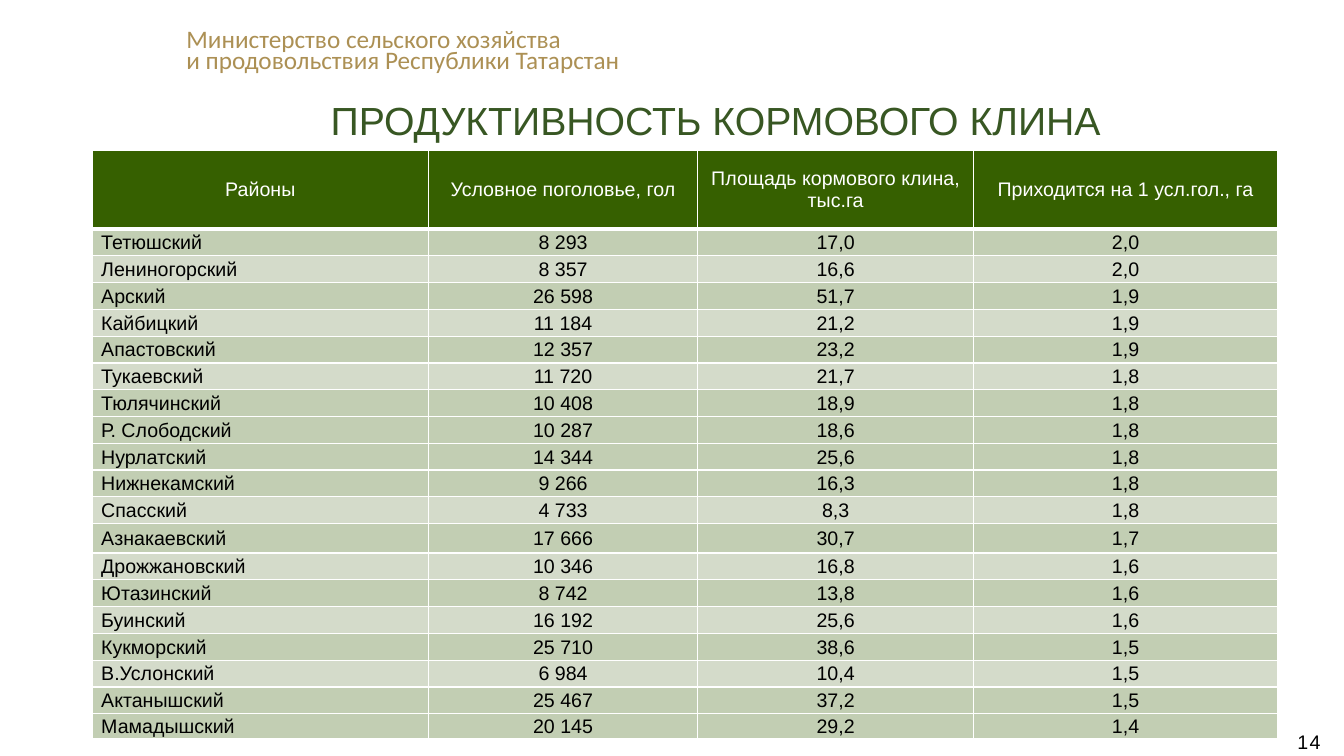
"""Build the slide on feed area productivity by district."""
import dataclasses
import typing

import pptx
import pptx.dml.color
import pptx.enum.text
import pptx.oxml
import pptx.oxml.ns
import pptx.util

Cm = pptx.util.Cm
Pt = pptx.util.Pt
ALIGN = pptx.enum.text.PP_ALIGN
ANCHOR = pptx.enum.text.MSO_ANCHOR

WHITE, BLACK = "FFFFFF", "000000"
HEADER_GREEN, BAND, LIGHT_BAND = "366000", "C2CEB3", "D4DBCA"
COLUMN_WIDTHS = (8.48, 6.78, 6.96, 7.65)
HEADER_HEIGHT, TALL_HEIGHT, LAST_HEIGHT = 1.98, 0.74, 0.63
ROW_HEIGHT = 11.49 / 17
HEADINGS = (
    "Районы",
    "Условное поголовье, гол",
    "Площадь кормового клина, тыс.га",
    "Приходится на 1 усл.гол., га",
)
CELL_INSETS = {
    "margin_left": Cm(0.03), "margin_top": Cm(0.03),
    "margin_right": Cm(0.03), "margin_bottom": 0,
}


@dataclasses.dataclass(frozen=True)
class TextStyle:
    size: float
    color: str
    name: str = "Arial"
    align: ALIGN = ALIGN.LEFT
    line_spacing: typing.Optional[float] = None
    tracking: int = 0
    indent: float = 0


@dataclasses.dataclass(frozen=True)
class Frame:
    left: float
    top: float
    width: float
    height: float


@dataclasses.dataclass(frozen=True)
class District:
    name: str
    herd: str
    area: str
    per_head: str
    fill: str = BAND
    height: float = ROW_HEIGHT


DISTRICTS = (
    District("Тетюшский", "8 293", "17,0", "2,0"),
    District("Лениногорский", "8 357", "16,6", "2,0", LIGHT_BAND),
    District("Арский", "26 598", "51,7", "1,9"),
    District("Кайбицкий", "11 184", "21,2", "1,9", LIGHT_BAND),
    District("Апастовский", "12 357", "23,2", "1,9"),
    District("Тукаевский", "11 720", "21,7", "1,8", LIGHT_BAND),
    District("Тюлячинский", "10 408", "18,9", "1,8"),
    District("Р. Слободский", "10 287", "18,6", "1,8"),
    District("Нурлатский", "14 344", "25,6", "1,8"),
    District("Нижнекамский", "9 266", "16,3", "1,8"),
    District("Спасский", "4 733", "8,3", "1,8", LIGHT_BAND),
    District("Азнакаевский", "17 666", "30,7", "1,7", height=TALL_HEIGHT),
    District("Дрожжановский", "10 346", "16,8", "1,6", LIGHT_BAND),
    District("Ютазинский", "8 742", "13,8", "1,6"),
    District("Буинский", "16 192", "25,6", "1,6", LIGHT_BAND),
    District("Кукморский", "25 710", "38,6", "1,5"),
    District("В.Услонский", "6 984", "10,4", "1,5", LIGHT_BAND),
    District("Актанышский", "25 467", "37,2", "1,5"),
    District("Мамадышский", "20 145", "29,2", "1,4", height=LAST_HEIGHT),
)

MINISTRY_STYLE = TextStyle(18, "AC9054", "Calibri", line_spacing=0.7)
TITLE_STYLE = TextStyle(28, "385723", align=ALIGN.CENTER)
HEADING_STYLE = TextStyle(14, WHITE, align=ALIGN.CENTER)
NAME_STYLE = TextStyle(14, BLACK, indent=0.2)
VALUE_STYLE = TextStyle(14, BLACK, align=ALIGN.CENTER)
NUMBER_STYLE = TextStyle(14, BLACK, align=ALIGN.CENTER, tracking=100)


def color(value: str) -> pptx.dml.color.RGBColor:
    return pptx.dml.color.RGBColor.from_string(value)


def apply(target: typing.Any, values: dict) -> None:
    for name, value in values.items():
        setattr(target, name, value)


def write(frame: typing.Any, lines: typing.Sequence[str], style: TextStyle) -> None:
    for index, line in enumerate(lines):
        para = frame.add_paragraph() if index else frame.paragraphs[0]
        apply(para, {"alignment": style.align, "line_spacing": style.line_spacing})
        if style.indent:
            para._p.get_or_add_pPr().set("marL", str(Cm(style.indent)))
        span = para.add_run()
        span.text = line
        apply(span.font, {"name": style.name, "size": Pt(style.size), "bold": False})
        span.font.color.rgb = color(style.color)
        if style.tracking:
            span._r.get_or_add_rPr().set("spc", str(style.tracking))


def place(box: typing.Any, frame: Frame) -> None:
    apply(box, {name: Cm(value) for name, value in dataclasses.asdict(frame).items()})


def add_label(page: typing.Any, frame: Frame, lines: typing.Sequence[str],
              style: TextStyle, **settings: typing.Any) -> None:
    box = page.shapes.add_textbox(0, 0, 0, 0)
    place(box, frame)
    apply(box.text_frame, {"word_wrap": False, **settings})
    write(box.text_frame, lines, style)


def add_borders(cell: typing.Any, top: float, bottom: float) -> None:
    widths = {"lnL": 1, "lnR": 1, "lnT": top, "lnB": bottom}
    for tag, width in widths.items():
        cell._tc.get_or_add_tcPr().append(pptx.oxml.parse_xml(
            f'<a:{tag} {pptx.oxml.ns.nsdecls("a")} w="{Pt(width)}"><a:solidFill>'
            f'<a:srgbClr val="{WHITE}"/></a:solidFill></a:{tag}>'))


def fill_cell(cell: typing.Any, text: str, style: TextStyle, fill: str,
              top: float = 1, bottom: float = 1) -> None:
    add_borders(cell, top, bottom)
    cell.fill.solid()
    cell.fill.fore_color.rgb = color(fill)
    cell.vertical_anchor = ANCHOR.MIDDLE
    write(cell.text_frame, [text], style)


def add_district_table(page: typing.Any) -> None:
    heights = [HEADER_HEIGHT] + [district.height for district in DISTRICTS]
    table = page.shapes.add_table(
        len(heights), len(HEADINGS), Cm(2.32), Cm(3.79),
        Cm(sum(COLUMN_WIDTHS)), Cm(sum(heights))).table
    table.horz_banding = False
    for column, width in zip(table.columns, COLUMN_WIDTHS):
        column.width = Cm(width)
    for row, height in zip(table.rows, heights):
        row.height = Cm(height)
    for column, heading in enumerate(HEADINGS):
        fill_cell(table.cell(0, column), heading, HEADING_STYLE, HEADER_GREEN, bottom=3)
    for row, district in enumerate(DISTRICTS, start=1):
        values = (district.name, district.herd, district.area, district.per_head)
        for column, value in enumerate(values):
            cell = table.cell(row, column)
            apply(cell, CELL_INSETS)
            style = VALUE_STYLE if column else NAME_STYLE
            fill_cell(cell, value, style, district.fill, top=3 if row == 1 else 1)


def main() -> None:
    deck = pptx.Presentation()
    apply(deck, {"slide_width": Cm(33.87), "slide_height": Cm(19.05)})
    page = deck.slides.add_slide(deck.slide_layouts[5])
    add_label(page, Frame(4.45, 0.66, 11.56, 1.37),
              ["Министерство сельского хозяйства",
               "и продовольствия Республики Татарстан"], MINISTRY_STYLE)
    title = page.shapes.title
    place(title, Frame(2.31, 2.31, 31.45, 1.45))
    apply(title.text_frame, {"vertical_anchor": ANCHOR.TOP, "word_wrap": True,
                             "auto_size": pptx.enum.text.MSO_AUTO_SIZE.NONE})
    write(title.text_frame, ["ПРОДУКТИВНОСТЬ КОРМОВОГО КЛИНА"], TITLE_STYLE)
    add_district_table(page)
    add_label(page, Frame(32.66, 18.39, 0.66, 0.58), ["14"], NUMBER_STYLE,
              margin_left=0, margin_top=0, margin_right=0, margin_bottom=0)
    deck.save("out.pptx")


if __name__ == "__main__":
    main()
